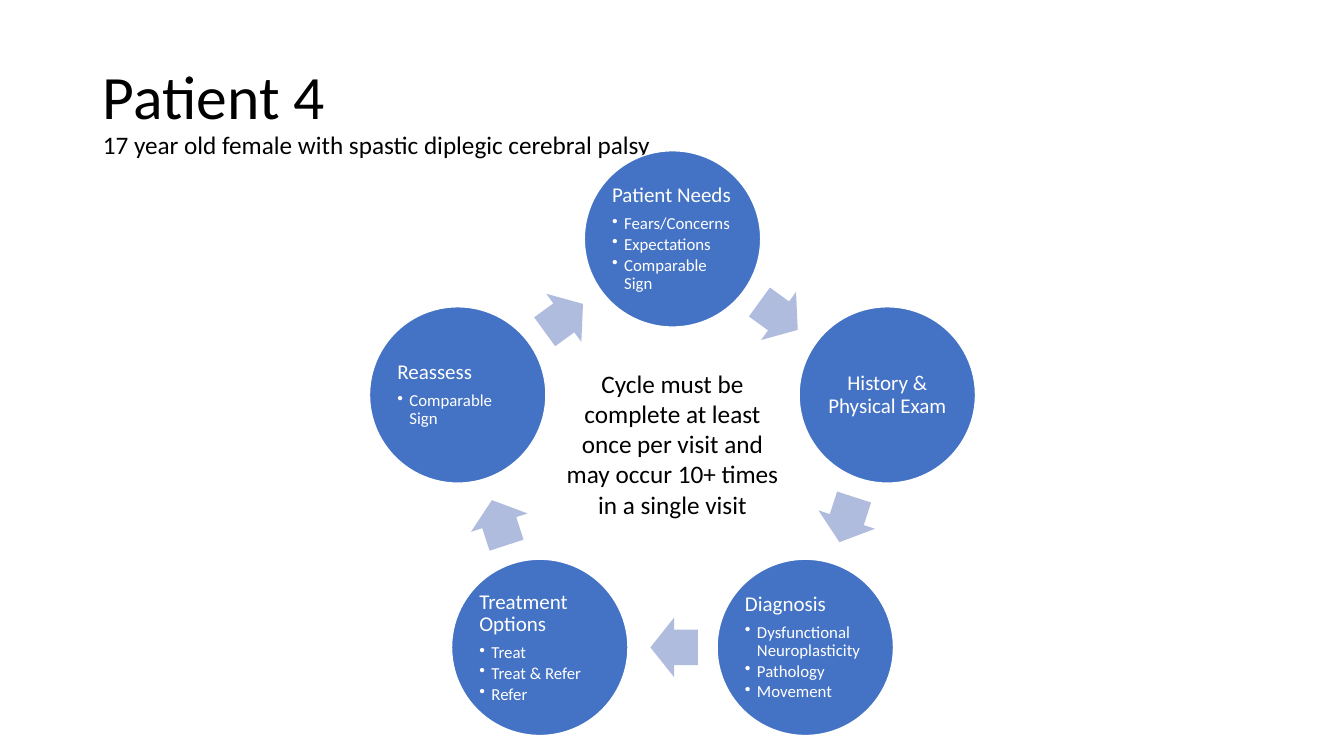
import math
from dataclasses import dataclass

from lxml import etree
from pptx import Presentation
from pptx import util as u
from pptx.dml.color import RGBColor
from pptx.enum import shapes, text
from pptx.oxml.ns import qn


@dataclass(frozen=True)
class Theme:
    font: str = "Calibri"
    dark: str = "000000"
    light: str = "FFFFFF"
    disc: str = "4472C4"
    arrow: str = "B0BCDE"
    title: float = 44
    body: float = 18
    head: float = 15
    item: float = 12


theme = Theme()


def style(para, size, color, align, space=None):
    para.font.name = theme.font
    para.font.size = u.Pt(size)
    para.font.color.rgb = RGBColor.from_string(color)
    para.alignment = align
    if space is not None:
        para.line_spacing = 0.9
        para.space_before = u.Pt(0)
        para.space_after = u.Pt(space)


def place(kind, x, y, wide, high, fill):
    shape = slide.shapes.add_shape(
        kind, u.Inches(x - wide / 2), u.Inches(y - high / 2), u.Inches(wide), u.Inches(high))
    shape.shadow.inherit = False
    shape.fill.solid()
    shape.fill.fore_color.rgb = RGBColor.from_string(fill)
    return shape


LEFT, MID = text.PP_ALIGN.LEFT, text.PP_ALIGN.CENTER

deck = Presentation()
deck.slide_width = u.Inches(13.33)
deck.slide_height = u.Inches(7.5)
slide = deck.slides.add_slide(deck.slide_layouts[5])

title = slide.shapes.title
title.left, title.top = u.Inches(0.92), u.Inches(0.4)
title.width, title.height = u.Inches(11.5), u.Inches(1.45)
frame = title.text_frame
frame.auto_size = text.MSO_AUTO_SIZE.NONE
frame.vertical_anchor = text.MSO_ANCHOR.MIDDLE
para = frame.paragraphs[0]
style(para, theme.title, theme.dark, LEFT, 0)
para.add_run().text = "Patient 4"
para.add_line_break()
run = para.add_run()
run.text = "17 year old female with spastic diplegic cerebral palsy"
run.font.size = u.Pt(theme.body)

steps = [
    ("Patient Needs", ["Fears/Concerns", "Expectations", "Comparable Sign"]),
    ("History & Physical Exam", []),
    ("Diagnosis", ["Dysfunctional Neuroplasticity", "Pathology", "Movement"]),
    ("Treatment Options", ["Treat", "Treat & Refer", "Refer"]),
    ("Reassess", ["Comparable Sign"]),
]
mid_x, mid_y, ring = 6.67, 4.61, 2.24
turn = 360 / len(steps)
inner = ring * math.cos(math.radians(turn / 2))

for i, (head, items) in enumerate(steps):
    angle = math.radians(i * turn)
    disc = place(shapes.MSO_SHAPE.OVAL, mid_x + ring * math.sin(angle),
                 mid_y - ring * math.cos(angle), 1.75, 1.75, theme.disc)
    disc.line.color.rgb = RGBColor.from_string(theme.light)
    disc.line.width = u.Pt(1)
    frame = disc.text_frame
    frame.word_wrap = True
    frame.vertical_anchor = text.MSO_ANCHOR.MIDDLE
    frame.margin_left = frame.margin_right = u.Inches(0.02)
    frame.margin_top = frame.margin_bottom = u.Inches(0.02)
    para = frame.paragraphs[0]
    para.text = head
    style(para, theme.head, theme.light, LEFT if items else MID, 5.5)
    for item in items:
        para = frame.add_paragraph()
        para.text = item
        style(para, theme.item, theme.light, LEFT, 1.8)
        props = para._p.get_or_add_pPr()
        props.set("marL", str(u.Inches(0.12)))
        props.set("indent", str(u.Inches(-0.12)))
        bullet = etree.Element(qn("a:buChar"), char="•")
        props.find(qn("a:defRPr")).addprevious(bullet)

    way = (i + 0.5) * turn
    angle = math.radians(way - 0.5)
    arrow = place(shapes.MSO_SHAPE.RIGHT_ARROW, mid_x + inner * math.sin(angle),
                  mid_y - inner * math.cos(angle), 0.47, 0.59, theme.arrow)
    arrow.line.fill.background()
    arrow.adjustments[0] = 0.6
    arrow.adjustments[1] = 0.5
    arrow.rotation = way

note = slide.shapes.add_textbox(u.Inches(5.44), u.Inches(3.6), u.Inches(2.46), u.Inches(1.62))
note.text_frame.word_wrap = True
note.text_frame.auto_size = text.MSO_AUTO_SIZE.SHAPE_TO_FIT_TEXT
para = note.text_frame.paragraphs[0]
para.text = "Cycle must be complete at least once per visit and may occur 10+ times in a single visit"
style(para, theme.body, theme.dark, MID)

deck.save("out.pptx")
